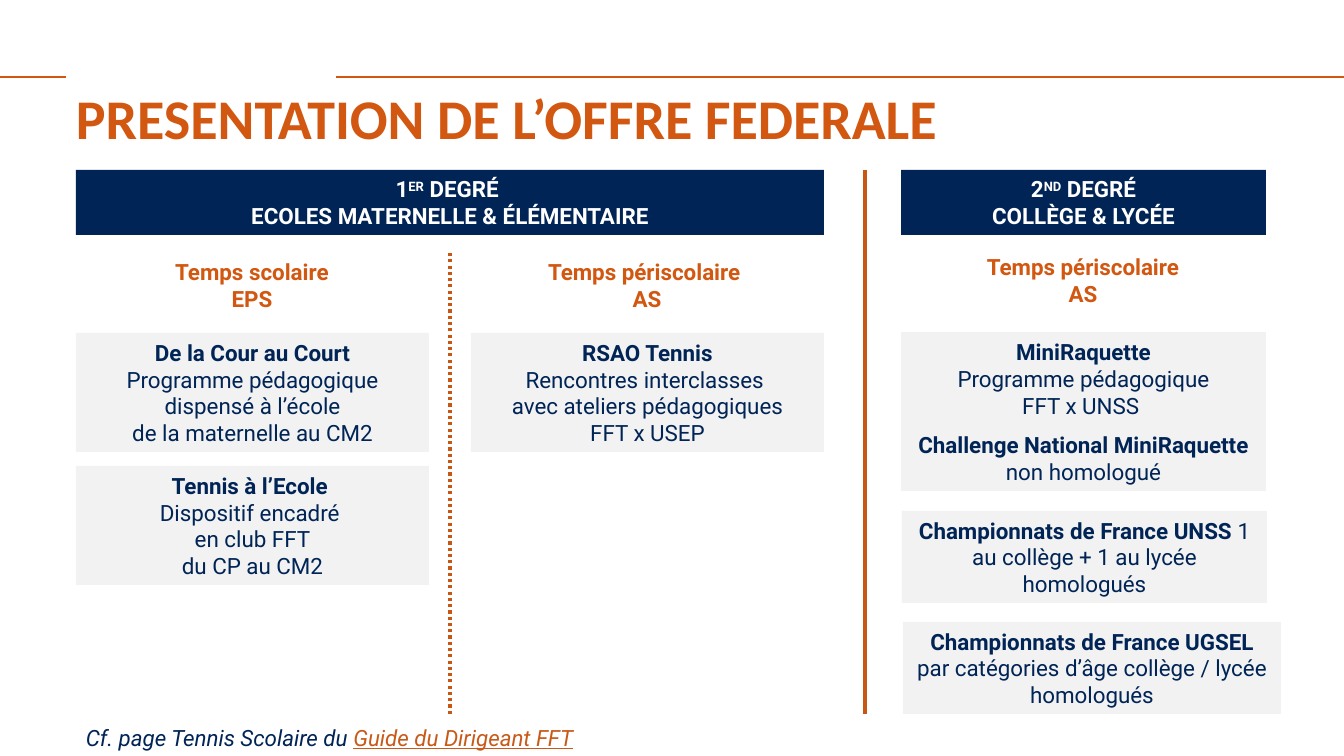
import pptx
import pptx.util
import pptx.dml.color
import pptx.enum.dml
import pptx.enum.shapes
import pptx.enum.text
import lxml.etree

ORANGE, RUST, NAVY, GREY, WHITE = "D25710", "C85714", "002455", "F2F2F2", "FFFFFF"
SCALE = 12192000 / 1344
BOLD = {"bold": True}
SUPER = {"bold": True, "baseline": 30000}

deck = pptx.Presentation()
deck.slide_width, deck.slide_height = 12192000, 6858000
slide = deck.slides.add_slide(deck.slide_layouts[6])


def rgb(value):
    return pptx.dml.color.RGBColor.from_string(value)


def write(box, paragraphs, size=16, font="Roboto", color=NAVY, bold=False, italic=False,
          align="CENTER", anchor="MIDDLE", margins=None, gaps=None):
    left, top, width, height, fill = box
    area = [round(length * SCALE) for length in (left, top, width, height)]
    if fill:
        holder = slide.shapes.add_shape(pptx.enum.shapes.MSO_SHAPE.RECTANGLE, *area)
        holder.shadow.inherit = False
        holder.fill.solid()
        holder.fill.fore_color.rgb = rgb(fill)
        holder.line.fill.background()
    else:
        holder = slide.shapes.add_textbox(*area)
    frame = holder.text_frame
    frame.word_wrap = True
    frame.vertical_anchor = pptx.enum.text.MSO_ANCHOR[anchor]
    if margins is not None:
        frame.margin_left = frame.margin_right = frame.margin_top = frame.margin_bottom = margins
    for index, runs in enumerate(paragraphs):
        paragraph = frame.add_paragraph() if index else frame.paragraphs[0]
        paragraph.alignment = pptx.enum.text.PP_ALIGN[align]
        if gaps and index in gaps:
            paragraph.space_before = pptx.util.Pt(gaps[index])
        for words, style in [(runs, {})] if isinstance(runs, str) else runs:
            run = paragraph.add_run()
            run.text = words
            run.font.name = font
            run.font.size = pptx.util.Pt(size)
            run.font.bold = style.get("bold", bold)
            run.font.italic = italic
            run.font.underline = style.get("underline", False)
            run.font.color.rgb = rgb(style.get("color", color))
            if "baseline" in style:
                run.font._element.set("baseline", str(style["baseline"]))


rules = [
    (336, 77, 1344, 77, ORANGE, 1, None),
    (-2, 77, 66, 77, ORANGE, 1, None),
    (450, 253, 450, 714, RUST, 2.25, "ROUND_DOT"),
    (865, 170, 865, 714, RUST, 2.25, None),
]
for x1, y1, x2, y2, color, weight, dash in rules:
    rule = slide.shapes.add_connector(
        pptx.enum.shapes.MSO_CONNECTOR.STRAIGHT,
        *[round(length * SCALE) for length in (x1, y1, x2, y2)])
    rule.line.color.rgb = rgb(color)
    rule.line.width = pptx.util.Pt(weight)
    if dash:
        rule.line.dash_style = pptx.enum.dml.MSO_LINE[dash]
    lxml.etree.SubElement(rule._element.spPr, pptx.oxml.ns.qn("a:effectLst"))

write((76, 84, 1192, 67, None), ["PRESENTATION DE L’OFFRE FEDERALE"],
      size=40, font="Calibri", color=ORANGE, bold=True, align="LEFT", anchor="TOP", margins=0)

degrees = [
    (76, 748, "1", "ER", " DEGRÉ ", "ECOLES MATERNELLE & ÉLÉMENTAIRE"),
    (901, 365, "2", "ND", " DEGRÉ", "COLLÈGE & LYCÉE"),
]
for left, width, number, ordinal, degree, schools in degrees:
    write((left, 170, width, 65, NAVY),
          [[(number, BOLD), (ordinal, SUPER), (degree, BOLD)], schools],
          color=WHITE, bold=True)

periods = [
    (105, 253, "Temps scolaire", "EPS"),
    (500, 253, "Temps périscolaire ", "AS"),
    (936, 248, "Temps périscolaire", "AS"),
]
for left, top, period, setting in periods:
    write((left, top, 294, 65, None), [period, setting], color=ORANGE, bold=True, anchor="TOP")

programmes = [
    (76, 333, 353, 119, [[("De la Cour au Court", BOLD)], "Programme pédagogique",
                         "dispensé à l’école", "de la maternelle au CM2"]),
    (471, 333, 353, 119, [[("RSAO Tennis", BOLD)], "Rencontres interclasses ",
                          "avec ateliers pédagogiques", "FFT x USEP"]),
    (76, 466, 353, 119, [[("Tennis à l’Ecole ", BOLD)], "Dispositif encadré ",
                         "en club FFT", "du CP au CM2"]),
    (901, 332, 365, 159, [[("MiniRaquette", BOLD)], "Programme pédagogique", "FFT x UNSS ",
                          [("Challenge National MiniRaquette", BOLD)], "non homologué"]),
    (902, 511, 365, 92, [[("Championnats de France UNSS ", BOLD),
                          ("1 au collège + 1 au lycée", {})], "homologués"]),
    (903, 622, 378, 92, [[("Championnats de France UGSEL ", BOLD),
                          ("par catégories d’âge collège / lycée", {})], "homologués"]),
]
for left, top, width, height, lines in programmes:
    write((left, top, width, height, GREY), lines, gaps={3: 9} if len(lines) == 5 else None)

write((76, 719, 828, 37, None),
      [[("Cf. page Tennis Scolaire du ", {}),
        ("Guide du Dirigeant FFT", {"color": "C85A19", "underline": True})]],
      italic=True, align="LEFT", anchor="TOP")

deck.save("out.pptx")
